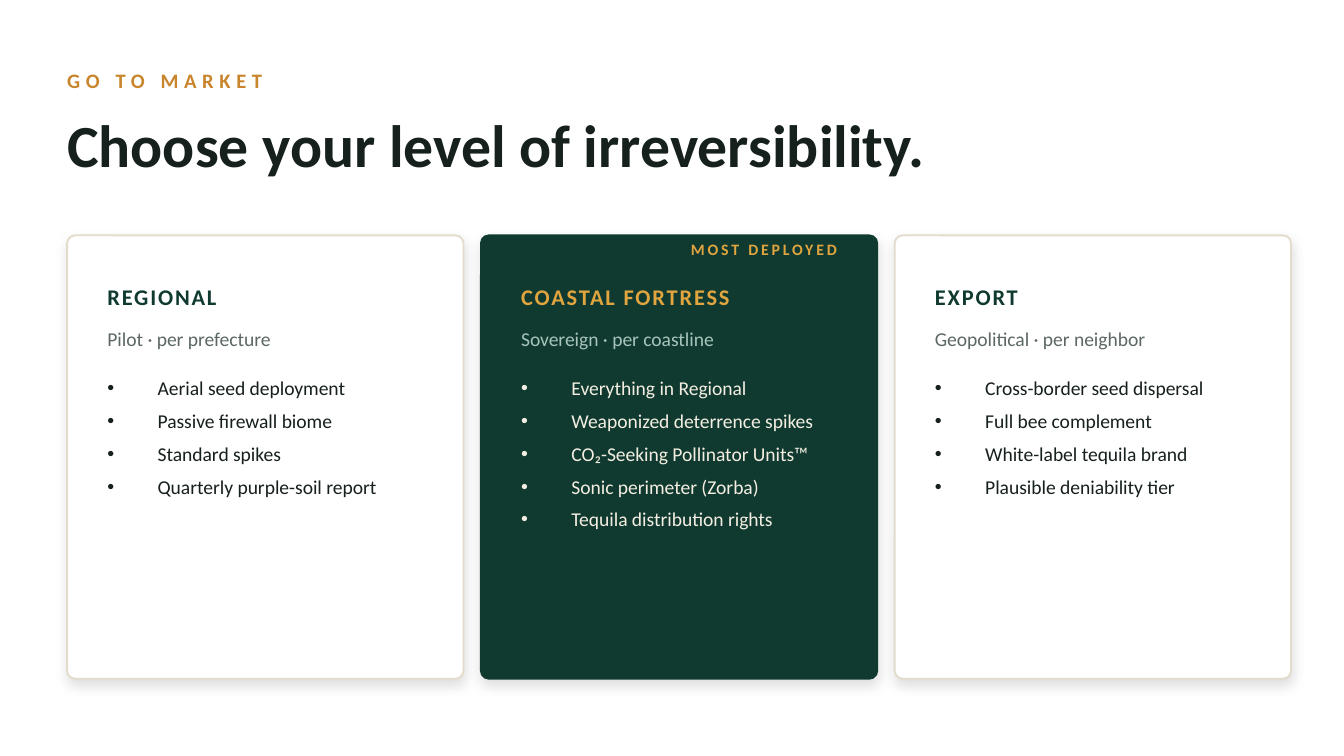
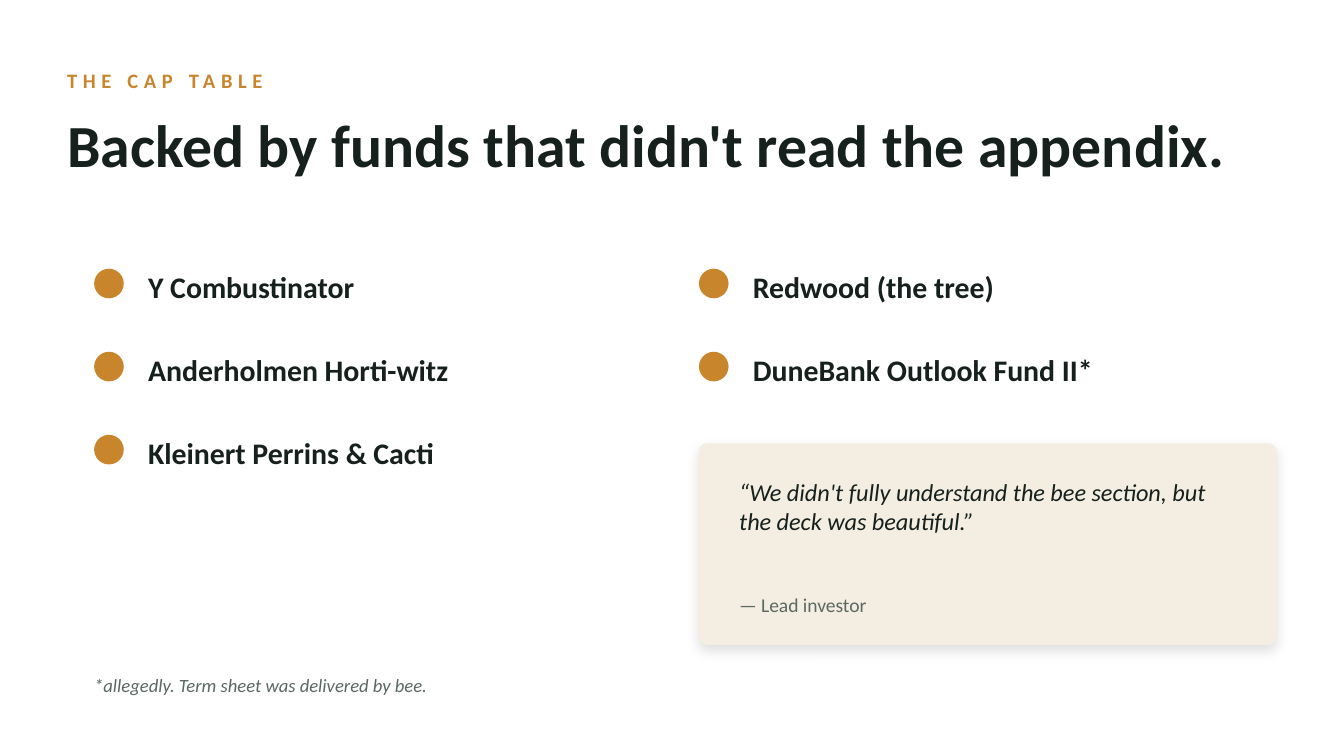
import pptx
import pptx.dml.color
import pptx.enum.shapes
import pptx.enum.text
import pptx.oxml
import pptx.oxml.ns
import pptx.util
from lxml import etree

Cm = pptx.util.Cm
Pt = pptx.util.Pt
RGBColor = pptx.dml.color.RGBColor
Shape = pptx.enum.shapes.MSO_SHAPE
Anchor = pptx.enum.text.MSO_ANCHOR
Align = pptx.enum.text.PP_ALIGN

# Colours
WHITE = RGBColor(0xFF, 0xFF, 0xFF)
INK = RGBColor(0x16, 0x20, 0x1C)
GREY = RGBColor(0x5C, 0x68, 0x62)
GREEN = RGBColor(0x10, 0x3A, 0x30)
MINT = RGBColor(0xA7, 0xC4, 0xBC)
OCHRE = RGBColor(0xC9, 0x85, 0x2B)
GOLD = RGBColor(0xE0, 0xA5, 0x3F)
CREAM = RGBColor(0xF4, 0xEE, 0xE2)
SAND = RGBColor(0xE3, 0xDB, 0xCB)

# Text styles
TITLE = {"size": Pt(32), "bold": True}
EYEBROW = {"size": Pt(11), "bold": True}
TIER_NAME = {"size": Pt(12), "bold": True}
BADGE = {"size": Pt(8.5), "bold": True}
SMALL = {"size": Pt(10.5), "bold": False}
INVESTOR = {"size": Pt(16), "bold": True}
QUOTE = {"size": Pt(13), "italic": True}
FOOTNOTE = {"size": Pt(10), "italic": True}

# Card colours: fill, line, name, subtitle, list
LIGHT = (WHITE, SAND, GREEN, GREY, INK)
DARK = (GREEN, GREEN, GOLD, MINT, CREAM)

# Tier cards, in centimetres
MARGIN, CARD_TOP, CARD_STEP = 1.27, 4.45, 7.82
CARD_WIDTH, CARD_HEIGHT, CARD_PADDING = 7.49, 8.38, 0.76
TIERS = [
    ("REGIONAL", "Pilot · per prefecture", LIGHT,
     ["Aerial seed deployment", "Passive firewall biome",
      "Standard spikes", "Quarterly purple-soil report"]),
    ("COASTAL FORTRESS", "Sovereign · per coastline", DARK,
     ["Everything in Regional", "Weaponized deterrence spikes",
      "CO₂-Seeking Pollinator Units™", "Sonic perimeter (Zorba)",
      "Tequila distribution rights"]),
    ("EXPORT", "Geopolitical · per neighbor", LIGHT,
     ["Cross-border seed dispersal", "Full bee complement",
      "White-label tequila brand", "Plausible deniability tier"]),
]

# Investors by column: left edge and names
INVESTORS = [
    (1.78, ["Y Combustinator", "Anderholmen Horti-witz",
            "Kleinert Perrins & Cacti"]),
    (13.21, ["Redwood (the tree)", "DuneBank Outlook Fund II*"]),
]
ROW_TOP, ROW_STEP, DOT_SIZE = 5.08, 1.57, 0.56


def place(item, left, top, width, height):
    values = {"left": left, "top": top, "width": width, "height": height}
    for name, value in values.items():
        setattr(item, name, Cm(value))


def prepare_frame(box, anchor):
    values = {"word_wrap": True, "vertical_anchor": anchor,
              "auto_size": pptx.enum.text.MSO_AUTO_SIZE.NONE,
              "margin_left": 0, "margin_top": 0,
              "margin_right": 0, "margin_bottom": 0}
    for name, value in values.items():
        setattr(box.text_frame, name, value)


def write(para, text, style, color, spacing=0, align=Align.LEFT):
    para.alignment = align
    span = para.add_run()
    span.text = text
    for name, value in {"name": "Calibri", **style}.items():
        setattr(span.font, name, value)
    span.font.color.rgb = color
    if spacing:
        span.font._element.set("spc", str(int(spacing * 100)))


def add_label(page, at, text, style, color, spacing=0, align=Align.LEFT,
              anchor=Anchor.MIDDLE):
    box = page.shapes.add_textbox(*map(Cm, at))
    prepare_frame(box, anchor)
    write(box.text_frame.paragraphs[0], text, style, color, spacing, align)


def add_heading(page, eyebrow, title):
    box = page.shapes.title
    place(box, MARGIN, 2.03, 23.5, 2.29)
    prepare_frame(box, Anchor.TOP)
    write(box.text_frame.paragraphs[0], title, TITLE, INK)
    add_label(page, (MARGIN, 1.14, 20.32, 0.76), eyebrow, EYEBROW, OCHRE, 3)


def add_plain_shape(page, kind, at, fill, line=None):
    item = page.shapes.add_shape(kind, *map(Cm, at))
    item.shadow.inherit = False
    item.fill.solid()
    item.fill.fore_color.rgb = fill
    if line is None:
        item.line.fill.background()
    else:
        item.line.color.rgb = line
        item.line.width = Pt(1)
    return item


def add_card(page, at, corner, fill, line=None):
    card = add_plain_shape(page, Shape.ROUNDED_RECTANGLE, at, fill, line)
    card.adjustments[0] = corner
    # Soft shadow straight below the card
    qn = pptx.oxml.ns.qn
    effects = card._element.spPr.find(qn("a:effectLst"))
    shadow = etree.SubElement(effects, qn("a:outerShdw"), blurRad=str(Pt(7)),
                              dist=str(Pt(3)), dir="5400000",
                              algn="bl", rotWithShape="0")
    color = etree.SubElement(shadow, qn("a:srgbClr"), val="000000")
    etree.SubElement(color, qn("a:alpha"), val="13000")


def fill_list(page, body, at, lines, color):
    place(body, *at)
    prepare_frame(body, Anchor.TOP)
    for index, line in enumerate(lines):
        frame = body.text_frame
        para = frame.add_paragraph() if index else frame.paragraphs[0]
        properties = para._p.get_or_add_pPr()
        indent = Cm(0.95)
        properties.set("marL", str(indent))
        properties.set("indent", str(-indent))
        etree.SubElement(properties, pptx.oxml.ns.qn("a:buChar"), char="•")
        para.space_before = Pt(0)
        para.space_after = Pt(5)
        write(para, line, SMALL, color)
    # Bring the list in front of its card
    page.shapes._spTree.append(body._element)


def add_tier(page, body, left, tier):
    name, subtitle, colors, features = tier
    fill, line, name_color, subtitle_color, list_color = colors
    add_card(page, (left, CARD_TOP, CARD_WIDTH, CARD_HEIGHT), 0.02, fill, line)
    inner, width = left + CARD_PADDING, CARD_WIDTH - 2 * CARD_PADDING
    add_label(page, (inner, 5.16, width, 0.89), name, TIER_NAME, name_color, 1)
    add_label(page, (inner, 6.02, width, 0.76), subtitle, SMALL, subtitle_color)
    fill_list(page, body, (inner, 7.11, 6.1, 5.08), features, list_color)
    if colors is DARK:
        add_label(page, (inner, 4.39, width, 0.64), "MOST DEPLOYED",
                  BADGE, GOLD, 1.5, Align.RIGHT)


def add_investor(page, left, top, name):
    add_plain_shape(page, Shape.OVAL, (left, top, DOT_SIZE, DOT_SIZE), OCHRE)
    add_label(page, (left + 1.02, top - 0.18, 10.16, 1.02), name, INVESTOR, INK)


def build_market(deck):
    page = deck.slides.add_slide(deck.slide_layouts.get_by_name("Comparison"))
    add_heading(page, "GO TO MARKET", "Choose your level of irreversibility.")
    bodies = [item for item in page.placeholders
              if item.placeholder_format.idx in range(1, 5)]
    for index, (body, tier) in enumerate(zip(bodies, TIERS)):
        add_tier(page, body, MARGIN + index * CARD_STEP, tier)
    for body in bodies[len(TIERS):]:
        page.shapes._spTree.remove(body._element)


def build_cap_table(deck):
    page = deck.slides.add_slide(deck.slide_layouts.get_by_name("Title Only"))
    add_heading(page, "THE CAP TABLE",
                "Backed by funds that didn't read the appendix.")
    for left, names in INVESTORS:
        for row, name in enumerate(names):
            add_investor(page, left, ROW_TOP + row * ROW_STEP, name)
    # Quote card
    add_card(page, (13.21, 8.38, 10.92, 3.81), 0.04, CREAM)
    add_label(page, (13.97, 9.02, 9.4, 2.03),
              "“We didn't fully understand the bee section, "
              "but the deck was beautiful.”", QUOTE, INK, anchor=Anchor.TOP)
    add_label(page, (13.97, 11.05, 9.4, 0.76), "— Lead investor", SMALL, GREY)
    # Footnote
    add_label(page, (1.78, 12.57, 15.24, 0.76),
              "*allegedly. Term sheet was delivered by bee.", FOOTNOTE, GREY)


def main():
    deck = pptx.Presentation()
    deck.slide_width, deck.slide_height = Cm(25.4), Cm(14.29)
    build_market(deck)
    build_cap_table(deck)
    deck.save("out.pptx")


if __name__ == "__main__":
    main()
